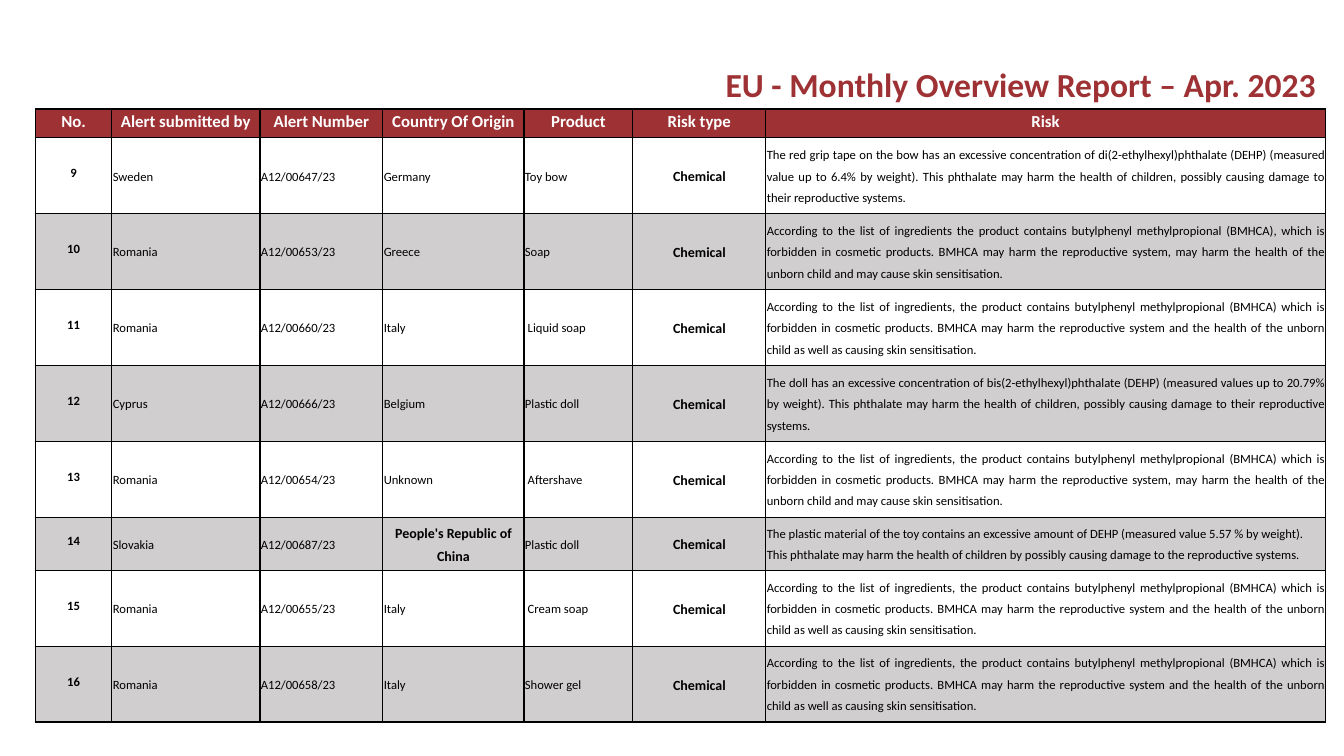
from lxml.etree import SubElement
from pptx import Presentation
from pptx.dml.color import RGBColor
from pptx.enum.text import MSO_ANCHOR, MSO_AUTO_SIZE, PP_ALIGN
from pptx.oxml.ns import qn
from pptx.util import Pt

RED, GREY, WHITE, BLACK = "9E3134", "D0CECE", "FFFFFF", "000000"

HEADERS = ["No.", "Alert submitted by", "Alert Number", "Country Of Origin",
           "Product", "Risk type", "Risk"]
COL_WIDTHS = [54.7, 105.8, 87.8, 100.8, 77.8, 95, 399.6]
HEADER_HEIGHT, ROW_HEIGHT, SHORT_ROW_HEIGHT = 20.6, 54.2, 37.8
FIRST_NUMBER = 9
RISK_TYPE = "Chemical"
LONG_COUNTRY = "People's Republic of China"

# Risk wording shared by several alerts
BMHCA = ("According to the list of ingredients, the product contains butylphenyl "
         "methylpropional (BMHCA) which is forbidden in cosmetic products. BMHCA may harm "
         "the reproductive system")
BMHCA_UNBORN = BMHCA + " and the health of the unborn child as well as causing skin sensitisation."
BMHCA_SKIN = BMHCA + ", may harm the health of the unborn child and may cause skin sensitisation."
BMHCA_LISTED = (BMHCA_SKIN.replace("ingredients,", "ingredients")
                .replace("(BMHCA) which", "(BMHCA), which"))
PHTHALATE = (" This phthalate may harm the health of children, possibly causing damage "
             "to their reproductive systems.")

# Submitted by, alert number, country of origin, product, risk
ALERTS = [
    ("Sweden", "A12/00647/23", "Germany", "Toy bow",
     "The red grip tape on the bow has an excessive concentration of "
     "di(2-ethylhexyl)phthalate (DEHP) (measured value up to 6.4% by weight)." + PHTHALATE),
    ("Romania", "A12/00653/23", "Greece", "Soap", BMHCA_LISTED),
    ("Romania", "A12/00660/23", "Italy", " Liquid soap", BMHCA_UNBORN),
    ("Cyprus", "A12/00666/23", "Belgium", "Plastic doll",
     "The doll has an excessive concentration of bis(2-ethylhexyl)phthalate (DEHP) "
     "(measured values up to 20.79% by weight)." + PHTHALATE),
    ("Romania", "A12/00654/23", "Unknown", " Aftershave", BMHCA_SKIN),
    ("Slovakia", "A12/00687/23", LONG_COUNTRY, "Plastic doll",
     "The plastic material of the toy contains an excessive amount of DEHP "
     "(measured value 5.57 % by weight).\n"
     "This phthalate may harm the health of children by possibly causing damage "
     "to the reproductive systems."),
    ("Romania", "A12/00655/23", "Italy", " Cream soap", BMHCA_UNBORN),
    ("Romania", "A12/00658/23", "Italy", "Shower gel", BMHCA_UNBORN),
]


def rgb(value):
    return RGBColor.from_string(value)


class Report:
    """Holds the style and the current slide."""
    font = "Calibri"

    def __init__(self, prs):
        self.s = prs.slides.add_slide(prs.slide_layouts[6])

    def add_text(self, tf, text, size, color=BLACK, bold=False, align=None, spacing=None):
        for i, line in enumerate(text.split("\n")):
            p = tf.add_paragraph() if i else tf.paragraphs[0]
            p.alignment = align
            p.line_spacing = spacing
            r = p.add_run()
            r.text = line
            r.font.name, r.font.size, r.font.bold = self.font, Pt(size), bold
            r.font.color.rgb = rgb(color)

    def title(self, text, left, top, width, height):
        sp = self.s.shapes.add_textbox(Pt(left), Pt(top), Pt(width), Pt(height))
        tf = sp.text_frame
        tf.word_wrap = False
        tf.auto_size = MSO_AUTO_SIZE.SHAPE_TO_FIT_TEXT
        self.add_text(tf, text, 24, RED, bold=True)

    def table(self, left, top, widths, heights):
        frame = self.s.shapes.add_table(len(heights), len(widths), Pt(left), Pt(top),
                                        Pt(sum(widths)), Pt(sum(heights)))
        table = frame.table
        table.first_row = table.horz_banding = False
        for column, width in zip(table.columns, widths):
            column.width = Pt(width)
        for row, height in zip(table.rows, heights):
            row.height = Pt(height)
        return table

    def border(self, cell):
        tc_pr = cell._tc.get_or_add_tcPr()
        for side in ("lnL", "lnR", "lnT", "lnB"):
            line = SubElement(tc_pr, qn(f"a:{side}"), w=str(Pt(1)))
            fill = SubElement(line, qn("a:solidFill"))
            SubElement(fill, qn("a:srgbClr"), val=BLACK)

    def cell(self, cell, text, size, fill=None, **style):
        self.border(cell)
        cell.margin_left = cell.margin_top = cell.margin_right = Pt(0.7)
        cell.margin_bottom = Pt(3.6)
        cell.vertical_anchor = MSO_ANCHOR.MIDDLE
        if fill:
            cell.fill.solid()
            cell.fill.fore_color.rgb = rgb(fill)
        else:
            cell.fill.background()
        self.add_text(cell.text_frame, text, size, **style)


def main():
    prs = Presentation()
    prs.slide_width, prs.slide_height = Pt(960), Pt(540)
    report = Report(prs)

    # Title
    report.title("EU - Monthly Overview Report – Apr. 2023", 511.2, 41.8, 438.5, 36)

    # Table with its header row
    heights = [HEADER_HEIGHT] + [SHORT_ROW_HEIGHT if alert[2] == LONG_COUNTRY else ROW_HEIGHT
                                 for alert in ALERTS]
    table = report.table(25.2, 77.8, COL_WIDTHS, heights)
    for col, header in enumerate(HEADERS):
        report.cell(table.cell(0, col), header, 12, RED, color=WHITE, bold=True,
                    align=PP_ALIGN.CENTER)

    # One row per alert, every second one shaded
    number = dict(size=9, bold=True, align=PP_ALIGN.CENTER)
    strong = dict(size=10, bold=True, align=PP_ALIGN.CENTER, spacing=1.4)
    plain = dict(size=9, align=PP_ALIGN.JUSTIFY, spacing=1.4)
    for row, (*details, risk) in enumerate(ALERTS, 1):
        fill = None if row % 2 else GREY
        values = [str(FIRST_NUMBER + row - 1), *details, RISK_TYPE, risk]
        for col, text in enumerate(values):
            if col == 0:
                style = number
            else:
                style = strong if text in (RISK_TYPE, LONG_COUNTRY) else plain
            report.cell(table.cell(row, col), text, fill=fill, **style)

    prs.save("out.pptx")


if __name__ == "__main__":
    main()
